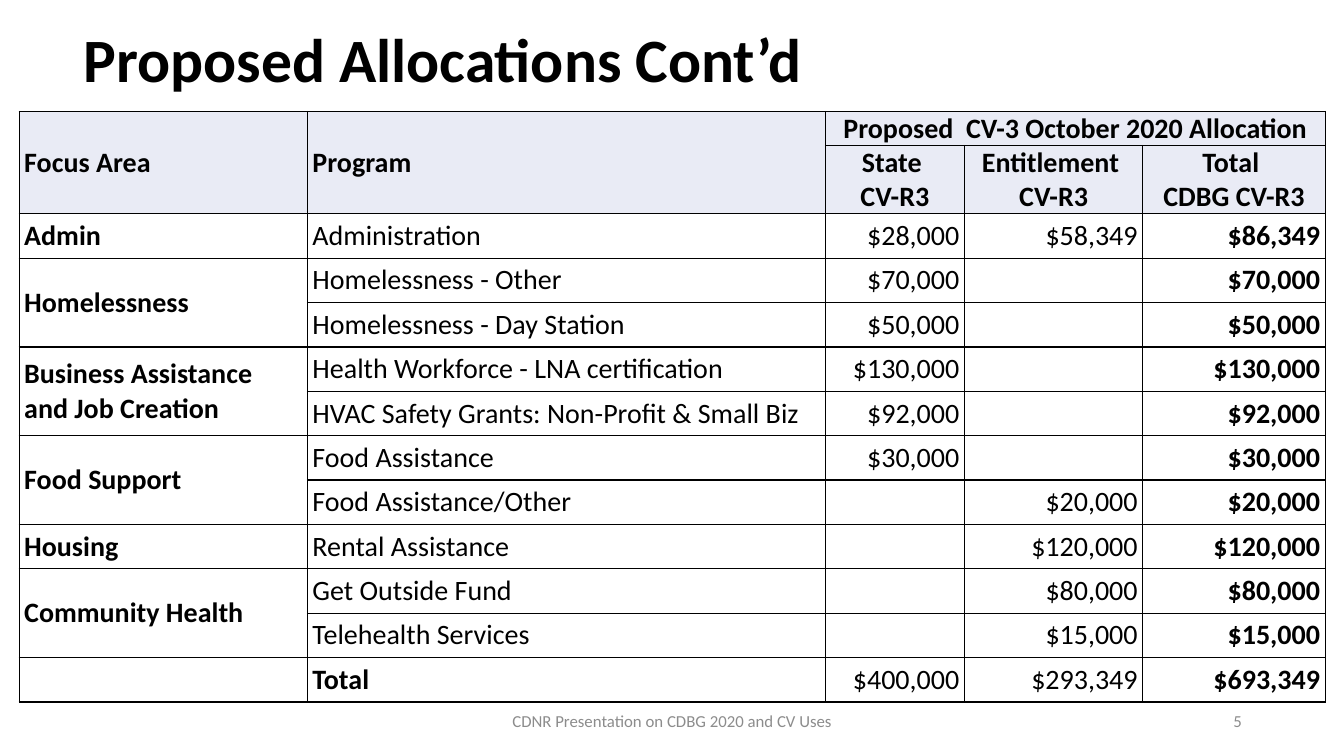
from dataclasses import dataclass

from lxml import etree
from pptx import Presentation
from pptx import util as u
from pptx.dml.color import RGBColor
from pptx.enum import text
from pptx.oxml.ns import qn

LEFT, CENTER, RIGHT = text.PP_ALIGN.LEFT, text.PP_ALIGN.CENTER, text.PP_ALIGN.RIGHT
MIDDLE, BOTTOM = text.MSO_ANCHOR.MIDDLE, text.MSO_ANCHOR.BOTTOM

# Focus area -> (program, state amount, entitlement amount)
ALLOCATIONS = {
    "Admin": [("Administration", 28000, 58349)],
    "Homelessness": [
        ("Homelessness - Other", 70000, 0),
        ("Homelessness - Day Station", 50000, 0),
    ],
    "Business Assistance and Job Creation": [
        ("Health Workforce - LNA certification", 130000, 0),
        ("HVAC Safety Grants: Non-Profit & Small Biz", 92000, 0),
    ],
    "Food Support": [
        ("Food Assistance", 30000, 0),
        ("Food Assistance/Other", 0, 20000),
    ],
    "Housing": [("Rental Assistance", 0, 120000)],
    "Community Health": [
        ("Get Outside Fund", 0, 80000),
        ("Telehealth Services", 0, 15000),
    ],
}
FUNDS = ["State \nCV-R3", "Entitlement \nCV-R3", "Total \nCDBG CV-R3"]
COLUMN_WIDTHS = [205.9, 370, 99.4, 127.4, 130.3]
HEADER_HEIGHTS = [24.4, 48.8]
ROW_HEIGHT = 31.7


@dataclass(frozen=True)
class Theme:
    font: str = "Calibri"
    ink: str = "000000"
    muted: str = "8C8C8C"
    header: str = "E9EBF5"
    body: str = "FFFFFF"
    title_size: int = 44
    table_size: int = 20
    footer_size: int = 12
    border: float = 1
    inset: float = 3.6


class SlideBuilder:
    def __init__(self, slide, theme):
        self.slide = slide
        self.theme = theme

    def set_words(self, frame, words, size, color, align=LEFT, bold=False):
        frame.text = words
        for para in frame.paragraphs:
            para.alignment = align
            para.font.size = u.Pt(size)
            for span in para.runs:
                span.font.name = self.theme.font
                span.font.size = u.Pt(size)
                span.font.bold = bold
                span.font.color.rgb = RGBColor.from_string(color)

    def label(self, area, words, size, color, align=LEFT, bold=False, spacing=1.0):
        box = self.slide.shapes.add_textbox(*map(u.Pt, area))
        frame = box.text_frame
        frame.word_wrap = True
        frame.vertical_anchor = MIDDLE
        self.set_words(frame, words, size, color, align, bold)
        frame.paragraphs[0].line_spacing = spacing

    def table(self, left, top, widths, heights):
        """Add a table whose cells all have a plain fill and a thin border."""
        frame = self.slide.shapes.add_table(
            len(heights), len(widths), u.Pt(left), u.Pt(top),
            u.Pt(sum(widths)), u.Pt(sum(heights)))
        table = frame.table
        table.first_row = table.horz_banding = False
        for column, width in zip(table.columns, widths):
            column.width = u.Pt(width)
        for row, height in zip(table.rows, heights):
            row.height = u.Pt(height)
        for cell in table.iter_cells():
            self.outline(cell)
            self.paint(cell, self.theme.body)
            self.pad(cell, self.theme.inset)
        return table

    def outline(self, cell):
        properties = cell._tc.get_or_add_tcPr()
        for side in ("a:lnL", "a:lnR", "a:lnT", "a:lnB"):
            line = etree.SubElement(properties, qn(side), w=str(u.Pt(self.theme.border)))
            fill = etree.SubElement(line, qn("a:solidFill"))
            etree.SubElement(fill, qn("a:srgbClr"), val=self.theme.ink)

    def paint(self, cell, color):
        cell.fill.solid()
        cell.fill.fore_color.rgb = RGBColor.from_string(color)

    def pad(self, cell, inset):
        cell.margin_left = cell.margin_right = u.Pt(inset)
        cell.margin_top = cell.margin_bottom = u.Pt(inset)

    def cell(self, cell, words, align=LEFT, bold=False, anchor=BOTTOM):
        cell.vertical_anchor = anchor
        self.set_words(cell.text_frame, words, self.theme.table_size, self.theme.ink, align, bold)


def dollars(amount):
    return f"${amount:,}" if amount else ""


def fill_header(builder, table):
    for row in range(len(HEADER_HEIGHTS)):
        for column in range(len(COLUMN_WIDTHS)):
            builder.paint(table.cell(row, column), builder.theme.header)
            if column >= 2:
                builder.pad(table.cell(row, column), 0)
    for column, words in enumerate(["Focus Area", "Program"]):
        table.cell(0, column).merge(table.cell(1, column))
        builder.cell(table.cell(0, column), words, bold=True, anchor=MIDDLE)
    table.cell(0, 2).merge(table.cell(0, 4))
    builder.cell(table.cell(0, 2), "Proposed  CV-3 October 2020 Allocation", CENTER, True)
    for column, words in enumerate(FUNDS, start=2):
        builder.cell(table.cell(1, column), words, CENTER, True)


def fill_row(builder, table, row, program, state, entitlement, bold=False):
    builder.cell(table.cell(row, 1), program, bold=bold)
    for column, amount in enumerate([state, entitlement, state + entitlement], start=2):
        builder.cell(table.cell(row, column), dollars(amount), RIGHT, column == 4)


def fill_body(builder, table):
    row = len(HEADER_HEIGHTS)
    for area, programs in ALLOCATIONS.items():
        if len(programs) > 1:
            table.cell(row, 0).merge(table.cell(row + len(programs) - 1, 0))
        builder.cell(table.cell(row, 0), area, bold=True, anchor=MIDDLE)
        for program in programs:
            fill_row(builder, table, row, *program)
            row += 1
    entries = [entry for programs in ALLOCATIONS.values() for entry in programs]
    state = sum(entry[1] for entry in entries)
    entitlement = sum(entry[2] for entry in entries)
    fill_row(builder, table, row, "Total", state, entitlement, bold=True)


def main():
    deck = Presentation()
    deck.slide_width, deck.slide_height = u.Pt(960), u.Pt(540)
    page = deck.slides.add_slide(deck.slide_layouts[6])
    theme = Theme()
    builder = SlideBuilder(page, theme)

    builder.label((52.6, 15.8, 828, 57.6), "Proposed Allocations Cont’d",
                  theme.title_size, theme.ink, bold=True, spacing=0.9)

    body_rows = sum(map(len, ALLOCATIONS.values())) + 1
    heights = HEADER_HEIGHTS + [ROW_HEIGHT] * body_rows
    table = builder.table(13.7, 79.6, COLUMN_WIDTHS, heights)
    fill_header(builder, table)
    fill_body(builder, table)

    builder.label((318.2, 500.4, 324, 28.8), "CDNR Presentation on CDBG 2020 and CV Uses",
                  theme.footer_size, theme.muted, CENTER)
    builder.label((678.2, 500.4, 216, 28.8), "5", theme.footer_size, theme.muted, RIGHT)
    deck.save("out.pptx")


if __name__ == "__main__":
    main()
